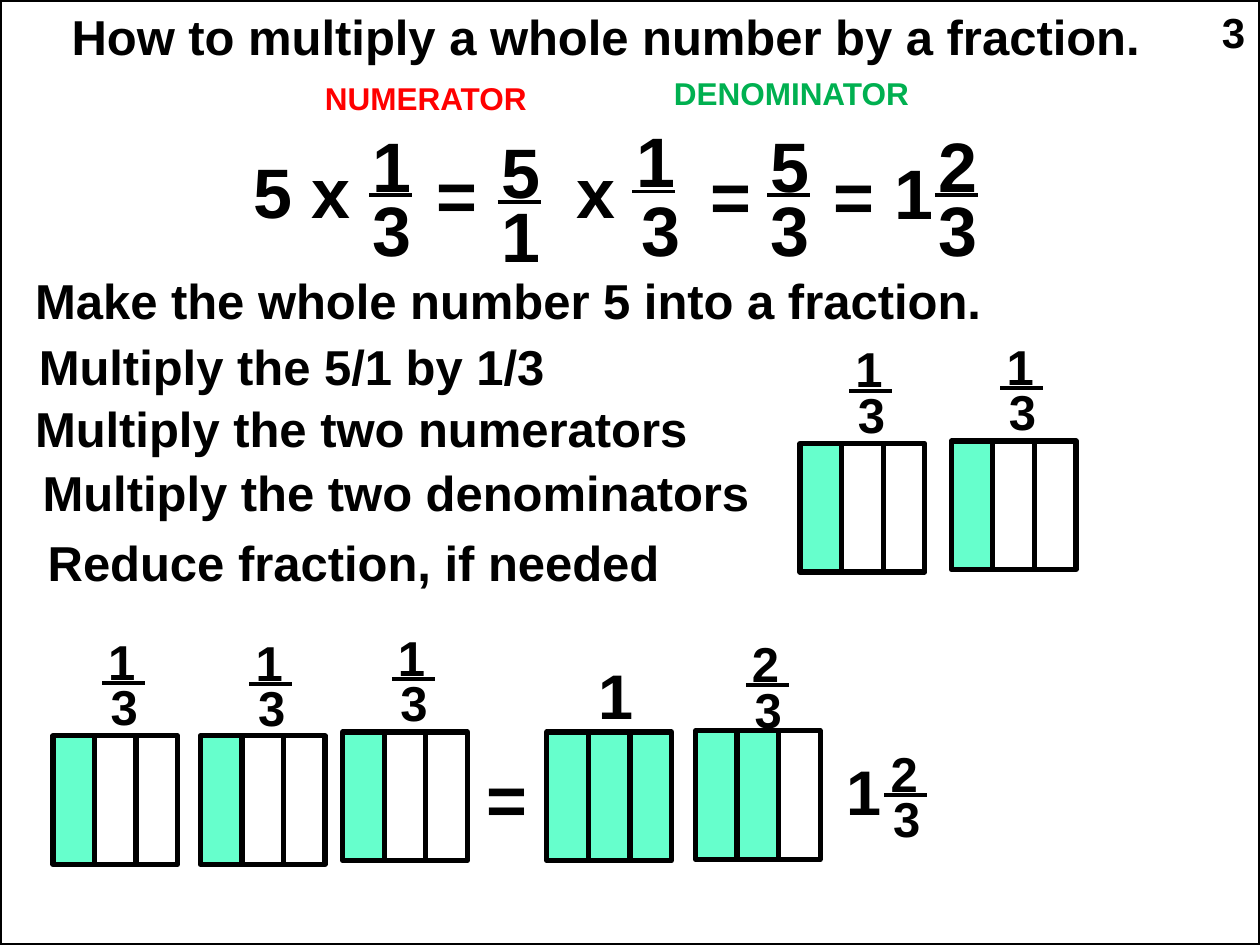
from lxml import etree
from pptx import Presentation
from pptx.dml.color import RGBColor
from pptx.enum.shapes import MSO_CONNECTOR, MSO_SHAPE
from pptx.enum.text import MSO_AUTO_SIZE
from pptx.oxml.ns import qn
from pptx.util import Inches, Pt

RECTANGLE = MSO_SHAPE.RECTANGLE
STRAIGHT = MSO_CONNECTOR.STRAIGHT
FIT_TEXT = MSO_AUTO_SIZE.SHAPE_TO_FIT_TEXT

BLACK, RED, GREEN, MINT = "000000", "FF0000", "00B050", "66FFCC"
FONT = "Arial"
SLIDE_WIDTH, SLIDE_HEIGHT = 10, 7.5
DIGIT_WIDTH = 0.43
RULE_LENGTH = 0.34
BAR_WIDTH, BAR_HEIGHT, BAR_STEP = 0.33, 1.02, 0.33
LINE_HEIGHTS = {18: 0.39, 24: 0.5, 28: 0.56, 36: 0.7, 40: 0.77}

LABELS = [
    ("NUMERATOR", 2.48, 0.58, 1.81, RED),
    ("DENOMINATOR", 5.25, 0.54, 2.07, GREEN),
]
SENTENCES = [
    ("How to multiply a whole number by a fraction.", 0.47, 0, 8.96),
    ("Make the whole number 5 into a fraction.", 0.18, 2.1, 8.01),
    ("Multiply the 5/1 by 1/3", 0.21, 2.62, 4.93),
    ("Multiply the two numerators", 0.18, 3.11, 5.96),
    ("Multiply the two denominators", 0.24, 3.62, 6.43),
    ("Reduce fraction, if needed", 0.28, 4.18, 5.81),
]
SYMBOLS = [
    ("3", 9.6, 0, 0.4, 24),
    ("5 x", 1.91, 1.13, 1.21, 40),
    ("=", 3.37, 1.15, DIGIT_WIDTH, 40),
    ("x", 4.48, 1.13, 0.77, 40),
    ("=", 5.54, 1.16, DIGIT_WIDTH, 40),
    ("=", 6.52, 1.16, DIGIT_WIDTH, 40),
    ("1", 7, 1.14, DIGIT_WIDTH, 40),
    ("=", 3.76, 5.95, DIGIT_WIDTH, 40),
    ("1", 4.65, 5.16, DIGIT_WIDTH, 36),
    ("1", 6.62, 5.92, DIGIT_WIDTH, 36),
]
LARGE = {"size": 40, "rule": (0.07, 0.63), "denominator": (0, 0.51)}
LARGE_SHIFTED = {"size": 40, "rule": (0.07, 0.64), "denominator": (0.04, 0.55)}
SMALL = {"size": 28, "rule": (0.05, 0.46), "denominator": (0.02, 0.36)}
FRACTIONS = [
    ("1", "3", 2.86, 0.92, LARGE),
    ("5", "1", 3.88, 0.97, LARGE),
    ("1", "3", 4.95, 0.88, LARGE_SHIFTED),
    ("5", "3", 6.02, 0.92, LARGE),
    ("2", "3", 7.35, 0.92, LARGE),
    ("1", "3", 6.69, 2.64, SMALL),
    ("1", "3", 7.89, 2.62, SMALL),
    ("1", "3", 0.76, 4.96, SMALL),
    ("1", "3", 1.93, 4.97, SMALL),
    ("1", "3", 3.06, 4.93, SMALL),
    ("2", "3", 5.87, 4.98, SMALL),
    ("2", "3", 6.97, 5.85, SMALL),
]
THIRDS = [
    (6.35, 3.52, 1),
    (7.55, 3.5, 1),
    (0.42, 5.84, 1),
    (1.59, 5.84, 1),
    (2.72, 5.81, 1),
    (4.34, 5.81, 3),
    (5.52, 5.8, 2),
]


def color(value):
    return RGBColor.from_string(value)


def add_text(slide, text, left, top, width, size, ink=BLACK, wrap=True):
    box = slide.shapes.add_textbox(
        Inches(left), Inches(top), Inches(width), Inches(LINE_HEIGHTS[size])
    )
    frame = box.text_frame
    frame.word_wrap = wrap
    frame.auto_size = FIT_TEXT
    frame.text = text
    font = frame.paragraphs[0].runs[0].font
    font.name, font.size, font.bold = FONT, Pt(size), True
    font.color.rgb = color(ink)


def add_rectangle(shapes, left, top, width, height, weight, fill=None):
    shape = shapes.add_shape(
        RECTANGLE, Inches(left), Inches(top), Inches(width), Inches(height)
    )
    shape.shadow.inherit = False
    if fill:
        shape.fill.solid()
        shape.fill.fore_color.rgb = color(fill)
    else:
        shape.fill.background()
    shape.line.color.rgb = color(BLACK)
    shape.line.width = Pt(weight)


def add_fraction(slide, numerator, denominator, left, top, style):
    size = style["size"]
    add_text(slide, numerator, left, top, DIGIT_WIDTH, size)
    rule_x, rule_y = left + style["rule"][0], top + style["rule"][1]
    rule = slide.shapes.add_connector(
        STRAIGHT, Inches(rule_x), Inches(rule_y),
        Inches(rule_x + RULE_LENGTH), Inches(rule_y),
    )
    rule.line.color.rgb = color(BLACK)
    rule.line.width = Pt(2.25)
    etree.SubElement(rule._element.spPr, qn("a:effectLst"))
    shift_x, shift_y = style["denominator"]
    add_text(slide, denominator, left + shift_x, top + shift_y, DIGIT_WIDTH, size)


def add_thirds(slide, left, top, shaded):
    shapes = slide.shapes.add_group_shape().shapes if shaded == 1 else slide.shapes
    for index in range(3):
        fill = MINT if index < shaded else None
        add_rectangle(
            shapes, left + index * BAR_STEP, top, BAR_WIDTH, BAR_HEIGHT, 3, fill
        )


def main():
    presentation = Presentation()
    presentation.slide_width = Inches(SLIDE_WIDTH)
    presentation.slide_height = Inches(SLIDE_HEIGHT)
    slide = presentation.slides.add_slide(presentation.slide_layouts[6])
    add_rectangle(slide.shapes, 0, 0, SLIDE_WIDTH, SLIDE_HEIGHT, 2)
    for text, left, top, width, ink in LABELS:
        add_text(slide, text, left, top, width, 18, ink, wrap=False)
    for sentence in SENTENCES:
        add_text(slide, *sentence, 28)
    for symbol in SYMBOLS:
        add_text(slide, *symbol)
    for fraction in FRACTIONS:
        add_fraction(slide, *fraction)
    for thirds in THIRDS:
        add_thirds(slide, *thirds)
    presentation.save("out.pptx")


if __name__ == "__main__":
    main()
